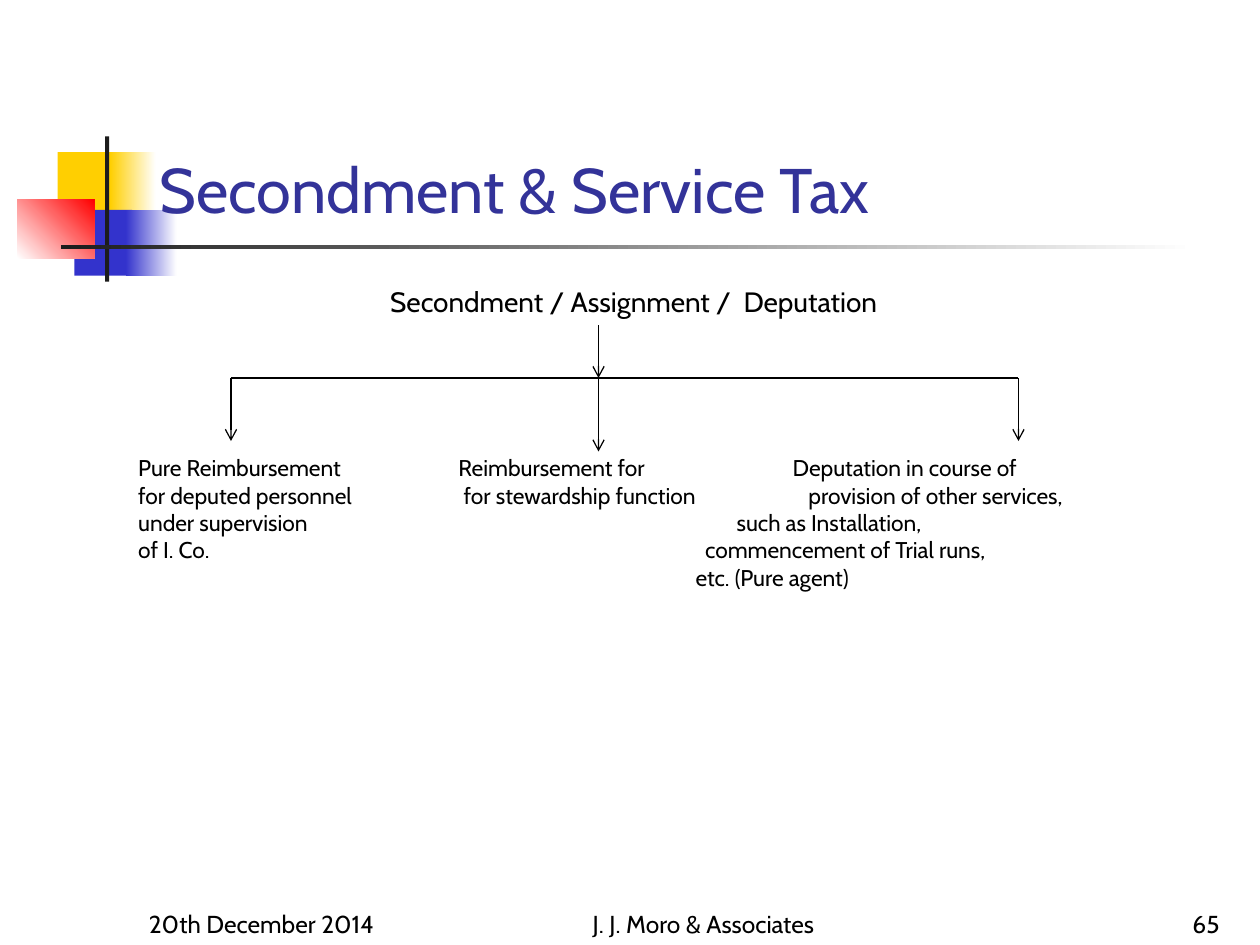
from dataclasses import dataclass

from lxml.etree import SubElement
from pptx import Presentation
from pptx.dml.color import RGBColor
from pptx.enum.shapes import MSO_CONNECTOR, MSO_SHAPE
from pptx.enum.text import MSO_ANCHOR as Anchor, PP_ALIGN as Align
from pptx.oxml.ns import qn
from pptx.util import Pt


@dataclass(frozen=True)
class Theme:
    font: str = "Cabin"
    title_size: float = 36
    heading_size: float = 16
    body_size: float = 13
    footer_size: float = 14
    line_width: float = 0.75
    text: str = "000000"
    title: str = "333399"
    yellow: str = "FFCF01"
    blue: str = "3333CC"
    red: str = "FF0000"
    dark: str = "1C1C1C"
    white: str = "FFFFFF"


THEME = Theme()

# Each line carries its own indent, in points from the left of its column.
BRANCHES = [
    (0, [("Pure Reimbursement", 0), ("for deputed personnel", 0),
         ("under supervision", 0), ("of I. Co.", 0)]),
    (183, [("Reimbursement for", 0), ("for stewardship function", 3)]),
    (318.5, [("Deputation in course of", 55.5), ("provision of other services,", 64.5),
             ("such as Installation,", 23.5), ("commencement of Trial runs,", 5.5),
             ("etc. (Pure agent)", 0)]),
]


def add_text(slide, box, lines, size, color=THEME.text, align=Align.LEFT,
             anchor=Anchor.TOP, inset=(0, 0)):
    """Place (text, indent) lines in a box given as left, top, width, height."""
    frame = slide.shapes.add_textbox(*map(Pt, box)).text_frame
    frame.word_wrap = True
    frame.vertical_anchor = anchor
    frame.margin_left = frame.margin_right = Pt(inset[0])
    frame.margin_top = frame.margin_bottom = Pt(inset[1])
    for index, (text, indent) in enumerate(lines):
        paragraph = frame.add_paragraph() if index else frame.paragraphs[0]
        paragraph.text = text
        paragraph.alignment = align
        if indent:
            paragraph._p.get_or_add_pPr().set("marL", str(Pt(indent)))
        paragraph.font.name = THEME.font
        paragraph.font.size = Pt(size)
        paragraph.font.color.rgb = RGBColor.from_string(color)


def add_block(slide, box, start, end=None, angle=0):
    """Add a borderless rectangle, plain or fading from start to end."""
    block = slide.shapes.add_shape(MSO_SHAPE.RECTANGLE, *map(Pt, box))
    block.shadow.inherit = False
    block.line.fill.background()
    if end is None:
        block.fill.solid()
        block.fill.fore_color.rgb = RGBColor.from_string(start)
        return
    block.fill.gradient()
    block.fill.gradient_angle = angle
    for stop, color, position in zip(block.fill.gradient_stops, (start, end), (0, 1)):
        stop.color.rgb = RGBColor.from_string(color)
        stop.position = position


def add_line(slide, start, end, arrow=False):
    line = slide.shapes.add_connector(MSO_CONNECTOR.STRAIGHT, *map(Pt, start + end))
    line.line.width = Pt(THEME.line_width)
    line.line.color.rgb = RGBColor.from_string(THEME.text)
    if arrow:
        SubElement(line.line._get_or_add_ln(), qn("a:tailEnd")).set("type", "arrow")
    SubElement(line._element.spPr, qn("a:effectLst"))


def add_ornament(slide, left, top):
    """Overlapping colour squares crossed by a bar and a fading rule."""
    blocks = [
        ((23, 9, 35, 37), THEME.yellow),
        ((53, 9, 26, 37), THEME.yellow, THEME.white),
        ((32.5, 42, 33, 37.5), THEME.blue),
        ((62, 42, 29, 37.5), THEME.blue, THEME.white),
        ((0, 36, 44, 33.5), THEME.white, THEME.red, 45),
        ((50, 0, 2.4, 83), THEME.dark),
        ((25, 62, 648, 2.6), THEME.dark, THEME.white),
    ]
    for (x, y, width, height), *fill in blocks:
        add_block(slide, (left + x, top + y, width, height), *fill)


def add_title(slide, box):
    add_text(slide, box, [("Secondment & Service Tax", 0)], THEME.title_size,
             THEME.title, anchor=Anchor.BOTTOM, inset=(7.2, 3.6))


def add_tree(slide, left, top):
    """Heading, its three arrows and the text under each of them."""
    add_text(slide, (left + 144, top, 340, 20),
             [("Secondment / Assignment /  Deputation", 0)], THEME.heading_size)

    first, middle, last = (left + x for x in (53, 263, 503))
    bar = top + 53.5
    add_line(slide, (middle, bar - 30), (middle, bar), arrow=True)
    add_line(slide, (first, bar), (last, bar))
    for x, drop in ((first, 36), (middle, 42), (last, 36)):
        add_line(slide, (x, bar), (x, bar + drop), arrow=True)

    for offset, lines in BRANCHES:
        add_text(slide, (left + offset, top + 97, 230, 16 * len(lines)),
                 lines, THEME.body_size)


def add_footer(slide, top, height):
    parts = [
        ("20th December 2014", 78, 150, Align.LEFT),
        ("J. J. Moro & Associates", 288, 228, Align.CENTER),
        ("65", 554, 150, Align.RIGHT),
    ]
    for text, left, width, align in parts:
        add_text(slide, (left, top, width, height), [(text, 0)], THEME.footer_size,
                 align=align, anchor=Anchor.BOTTOM, inset=(7.2, 3.6))


def main():
    deck = Presentation()
    deck.slide_width, deck.slide_height = Pt(720), Pt(540)
    slide = deck.slides.add_slide(deck.slide_layouts[6])
    add_ornament(slide, 10, 78)
    add_title(slide, (84, 18, 629, 115))
    add_tree(slide, 79, 162.5)
    add_footer(slide, 504, 36)
    deck.save("out.pptx")


if __name__ == "__main__":
    main()
